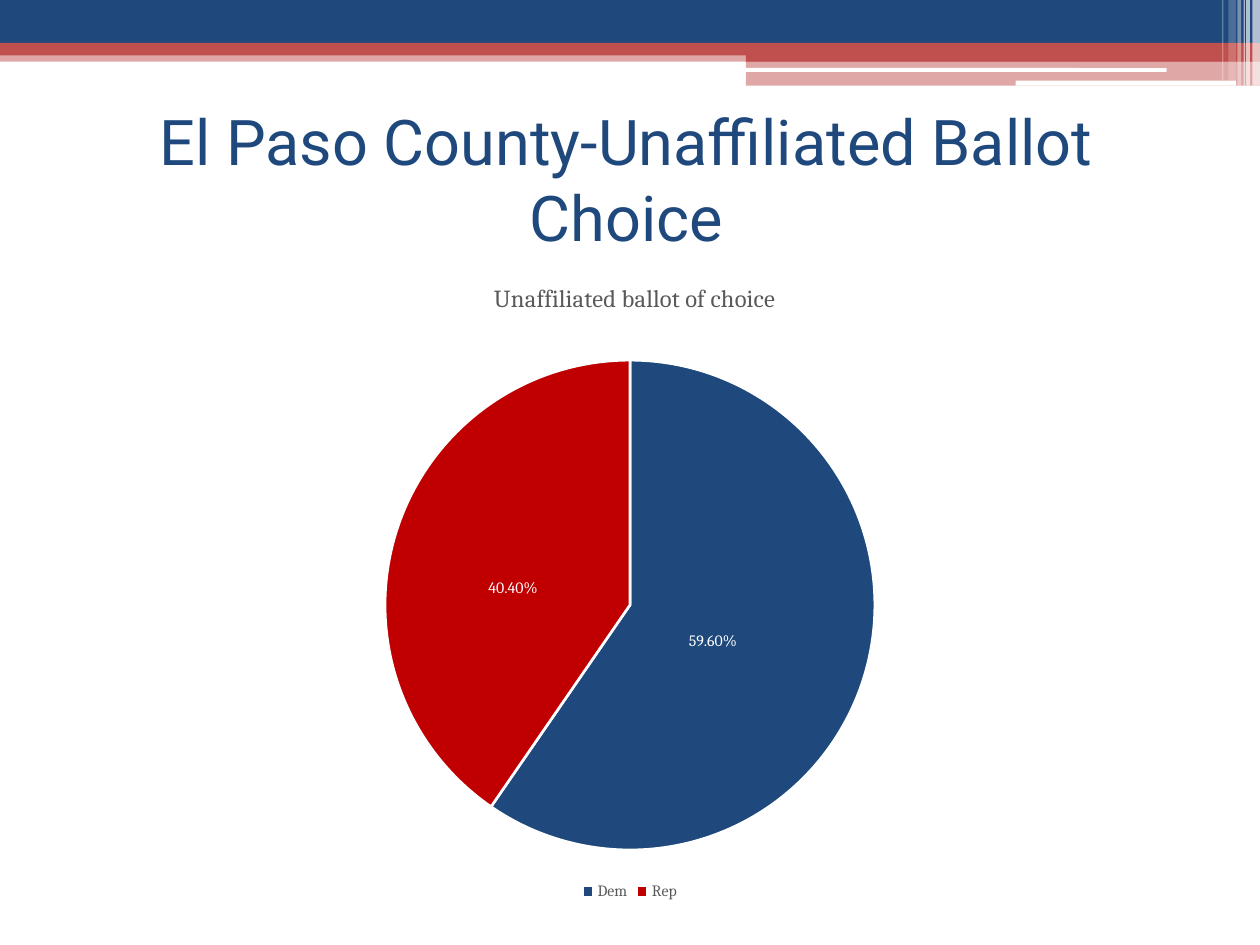
from lxml.etree import SubElement
from pptx import Presentation
from pptx.chart.data import CategoryChartData
from pptx.dml.color import RGBColor
from pptx.enum.chart import XL_CHART_TYPE, XL_LABEL_POSITION, XL_LEGEND_POSITION
from pptx.enum.shapes import MSO_SHAPE
from pptx.enum.text import MSO_ANCHOR, PP_ALIGN
from pptx.oxml import parse_xml
from pptx.oxml.ns import nsdecls, qn
from pptx.util import Inches, Pt

COLORS = {"navy": "1F497D", "brick": "C0504D", "red": "C00000",
          "white": "FFFFFF", "gray": "595959", "black": "000000"}
RECT, ROUND = MSO_SHAPE.RECTANGLE, MSO_SHAPE.ROUNDED_RECTANGLE

# left, top, width, height, color, opacity in percent, shape
BANDS = [
    (0, 0.4, 10, 0.09, "brick", 50, RECT),
    (0, 0, 10, 0.34, "navy", 100, RECT),
    (0, 0.34, 10, 0.1, "brick", 100, RECT),
    (5.92, 0.39, 4.08, 0.1, "brick", 100, RECT),
    (5.92, 0.48, 4.08, 0.2, "brick", 50, RECT),
    (5.91, 0.54, 3.35, 0.03, "white", 100, ROUND),
    (8.06, 0.64, 1.75, 0.04, "white", 100, ROUND),
]
# left, width, height, opacity in percent
STRIPES = [(9.94, 0.06, 0.68, 65), (9.89, 0.03, 0.68, 65), (9.87, 0.01, 0.68, 60),
           (9.82, 0.03, 0.68, 40), (9.75, 0.06, 0.64, 20), (9.7, 0.01, 0.64, 30)]
# category, share, color, label offset as a share of the chart
SLICES = [("Dem", 0.596, "navy", (-0.03, 0)), ("Rep", 0.404, "red", (0, 0.03))]


def rgb(name):
    return RGBColor.from_string(COLORS[name])


def style(font, name, size, color):
    font.name, font.size, font.bold = name, Pt(size), False
    font.color.rgb = rgb(color)


def add_band(s, left, top, width, height, color, opacity=100, kind=RECT):
    sp = s.shapes.add_shape(kind, *map(Inches, (left, top, width, height)))
    sp.shadow.inherit = False
    sp.line.fill.background()
    sp.fill.solid()
    sp.fill.fore_color.rgb = rgb(color)
    if opacity < 100:
        clr = sp.fill._xPr.find(".//" + qn("a:srgbClr"))
        SubElement(clr, qn("a:alpha")).set("val", str(opacity * 1000))


def add_title(s, text):
    sp = s.shapes.title
    sp.left, sp.top, sp.width, sp.height = map(Inches, (0.47, 0.83, 9, 1.17))
    tf = sp.text_frame
    tf.word_wrap, tf.vertical_anchor = True, MSO_ANCHOR.MIDDLE
    p = tf.paragraphs[0]
    p.alignment = PP_ALIGN.CENTER
    r = p.add_run()
    r.text = text
    style(r.font, "Roboto", 36, "navy")


def set_layout(parent, index, **places):
    """Place a chart part by hand, in shares of the chart's size."""
    old = parent.find(qn("c:layout"))
    if old is not None:
        parent.remove(old)
    layout = parse_xml(f"<c:layout {nsdecls('c')}><c:manualLayout/></c:layout>")
    for tag, value in places.items():
        SubElement(layout[0], qn("c:" + tag)).set("val", str(value))
    parent.insert(index, layout)


def add_pie(s):
    data = CategoryChartData(number_format="0.00%")
    data.categories = [name for name, *_ in SLICES]
    data.add_series("Series 1", [share for _, share, *_ in SLICES])
    box = map(Inches, (0.5, 2, 9, 5.19))
    chart = s.shapes.add_chart(XL_CHART_TYPE.PIE, *box, data).chart
    style(chart.font, "Cambria", 10, "black")

    chart.has_title = True
    r = chart.chart_title.text_frame.paragraphs[0].add_run()
    r.text = "Unaffiliated ballot of choice"
    style(r.font, "Cambria", 14, "gray")
    set_layout(chart.chart_title._element, 1, xMode="edge", yMode="edge", x=0.376, y=0.04)

    chart.has_legend = True
    chart.legend.position = XL_LEGEND_POSITION.BOTTOM
    chart.legend.include_in_layout = False
    style(chart.legend.font, "Cambria", 9, "gray")

    plot = chart.plots[0]
    plot.vary_by_categories = True
    set_layout(chart._chartSpace.chart.plotArea, 0, layoutTarget="inner",
               xMode="edge", yMode="edge", x=0.284, y=0.165, w=0.432, h=0.75)
    plot.has_data_labels = True
    labels = plot.data_labels
    labels.show_value, labels.show_percentage = True, False
    labels.number_format, labels.number_format_is_linked = "0.00%", False
    style(labels.font, "Cambria", 9, "white")
    for i, (_, _, color, (dx, dy)) in enumerate(SLICES):
        point = plot.series[0].points[i]
        point.format.fill.solid()
        point.format.fill.fore_color.rgb = rgb(color)
        point.format.line.color.rgb = rgb("white")
        point.format.line.width = Pt(1.5)
        style(point.data_label.font, "Cambria", 9, "white")
        point.data_label.position = XL_LABEL_POSITION.CENTER
        label = plot.series[0]._element.findall(".//" + qn("c:dLbl"))[i]
        set_layout(label, 1, x=dx, y=dy)


def main():
    prs = Presentation()
    prs.slide_width, prs.slide_height = Inches(10), Inches(7.5)
    s = prs.slides.add_slide(prs.slide_layouts[5])
    for band in BANDS:
        add_band(s, *band)
    for left, width, height, opacity in STRIPES:
        add_band(s, left, 0, width, height, "white", opacity)
    add_title(s, "El Paso County-Unaffiliated Ballot Choice")
    add_pie(s)
    prs.save("out.pptx")


if __name__ == "__main__":
    main()
